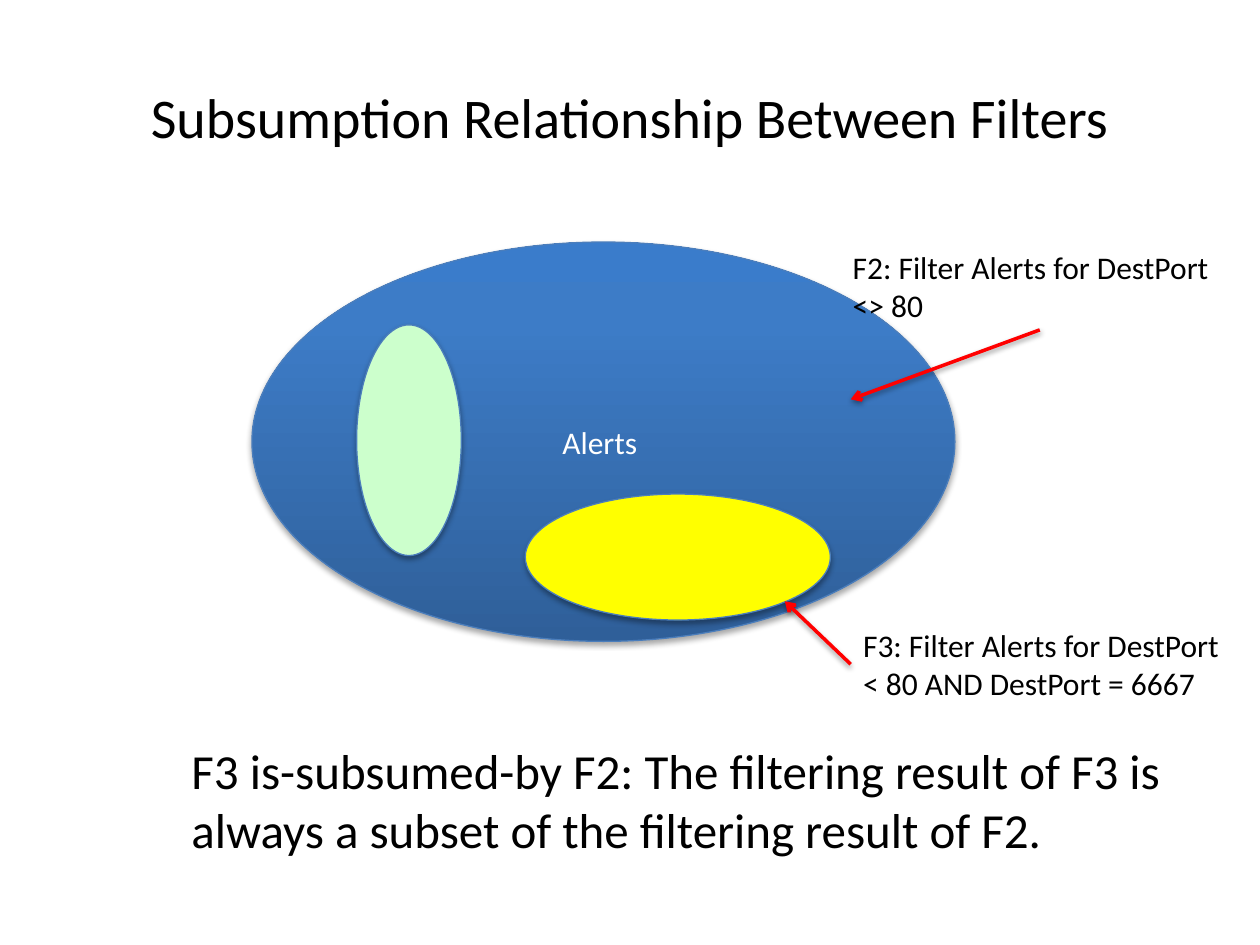
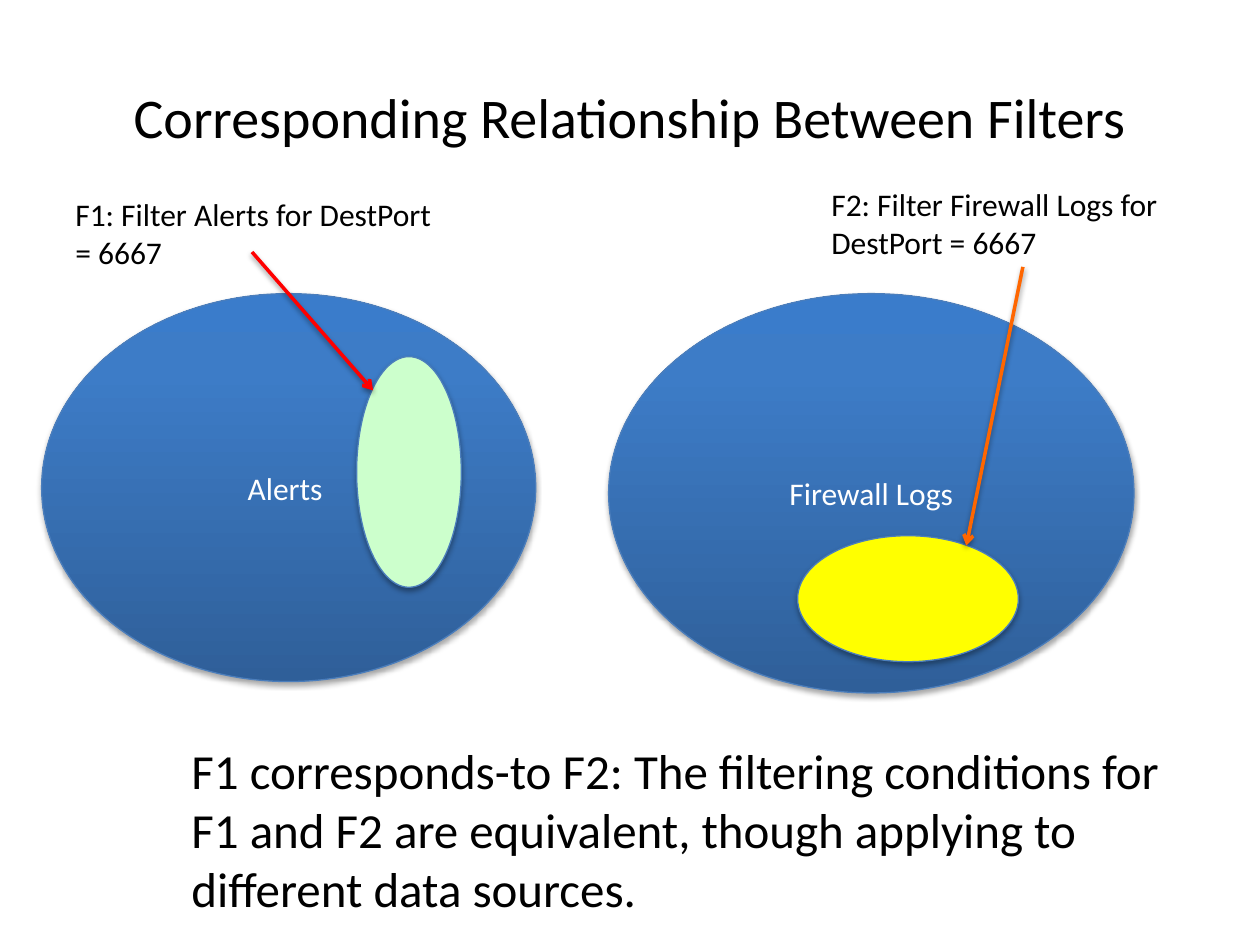
from lxml.etree import SubElement
from pptx import Presentation
from pptx.dml.color import RGBColor
from pptx.enum.shapes import MSO_CONNECTOR as Link, MSO_SHAPE as Kind
from pptx.enum.text import MSO_ANCHOR as Anchor, MSO_AUTO_SIZE as Fit, PP_ALIGN as Align
from pptx.oxml.ns import qn
from pptx.util import Cm, Pt

INK = {
    "text": "000000",
    "light": "FFFFFF",
    "edge": "4B7EBC",
    "green": "CCFFCC",
    "yellow": "FFFF00",
    "red": "FF0000",
    "orange": "FF6600",
    "low": "2F5F99",
    "mid": "3D7CC7",
    "high": "3A7CCB",
}
BLEND = [(0, "low"), (80, "mid"), (100, "high")]
TITLE_ONLY = 5


def rgb(name):
    return RGBColor.from_string(INK[name])


def add(root, tag, **attrs):
    return SubElement(root, qn(tag), {key: str(val) for key, val in attrs.items()})


def write(frame, text, size=18, color="text", align=Align.LEFT):
    para = frame.paragraphs[0]
    para.alignment = align
    run = para.add_run()
    run.text = text
    run.font.name = "Calibri"
    run.font.size = Pt(size)
    run.font.color.rgb = rgb(color)


def shade(effects, dist, alpha):
    """Fill an effect list with a soft shadow that falls straight down."""
    drop = add(effects, "a:outerShdw", blurRad=Pt(3.15), dist=Pt(dist),
               dir=90 * 60000, rotWithShape=0)
    tint = add(drop, "a:srgbClr", val=INK["text"])
    add(tint, "a:alpha", val=alpha * 1000)


def blend(shape):
    """Give a shape the blue gradient, dark at the bottom."""
    shape.fill.gradient()
    shape.fill.gradient_angle = 90
    stops = next(shape.element.iter(qn("a:gsLst")))
    for stop in list(stops):
        stops.remove(stop)
    for pos, name in BLEND:
        stop = add(stops, "a:gs", pos=pos * 1000)
        add(stop, "a:srgbClr", val=INK[name])


class Deck:
    def __init__(self):
        self.prs = Presentation()
        self.prs.slide_width, self.prs.slide_height = Cm(25.4), Cm(19.05)
        self.slide = None

    def start(self, title):
        """Open a new slide with its title."""
        layout = self.prs.slide_layouts[TITLE_ONLY]
        self.slide = self.prs.slides.add_slide(layout)
        head = self.slide.shapes.title
        head.left, head.top, head.width, head.height = map(Cm, (1.27, 0.76, 22.86, 3.18))
        head.text_frame.vertical_anchor = Anchor.MIDDLE
        write(head.text_frame, title, size=32, align=Align.CENTER)

    def oval(self, x, y, w, h, fill=None, text=None):
        """Draw a set of records; without a fill colour it gets the gradient."""
        shape = self.slide.shapes.add_shape(Kind.OVAL, *map(Cm, (x, y, w, h)))
        if fill:
            shape.fill.solid()
            shape.fill.fore_color.rgb = rgb(fill)
        else:
            blend(shape)
        shape.line.color.rgb = rgb("edge")
        shape.line.width = Pt(0.75)
        shape.shadow.inherit = False
        shade(next(shape.element.iter(qn("a:effectLst"))), dist=1.81, alpha=35)
        if text:
            shape.text_frame.vertical_anchor = Anchor.MIDDLE
            write(shape.text_frame, text, color="light", align=Align.CENTER)

    def note(self, x, y, w, text, h=1.8, size=18):
        box = self.slide.shapes.add_textbox(*map(Cm, (x, y, w, h)))
        box.text_frame.word_wrap = True
        box.text_frame.auto_size = Fit.SHAPE_TO_FIT_TEXT
        write(box.text_frame, text, size=size)

    def claim(self, text, h):
        """Put the conclusion in large type at the foot of the slide."""
        self.note(3.61, 14.81, 20.12, text, h=h, size=28)

    def arrow(self, x1, y1, x2, y2, color="red"):
        line = self.slide.shapes.add_connector(Link.STRAIGHT, *map(Cm, (x1, y1, x2, y2)))
        line.line.color.rgb = rgb(color)
        line.line.width = Pt(2)
        add(line.line._get_or_add_ln(), "a:tailEnd", type="arrow")
        shade(add(line.element.spPr, "a:effectLst"), dist=1.57, alpha=38)


def subsume(deck):
    deck.start("Subsumption Relationship Between Filters")
    deck.oval(5.08, 4.88, 14.17, 8.05, text="Alerts ")
    deck.oval(7.19, 6.55, 2.11, 4.65, fill="green")
    deck.claim("F3 is-subsumed-by F2: The filtering result of F3 is "
               "always a subset of the filtering result of F2.", h=2.64)
    deck.note(16.94, 4.88, 8.05, "F2: Filter Alerts for DestPort <> 80")
    deck.arrow(20.96, 6.65, 17.15, 8.05)
    deck.oval(10.59, 9.96, 6.15, 2.54, fill="yellow")
    deck.note(17.15, 12.5, 7.82, "F3: Filter Alerts for DestPort < 80 AND DestPort = 6667")
    deck.arrow(17.15, 13.39, 15.82, 12.12)


def match(deck):
    deck.start("Corresponding Relationship Between Filters")
    deck.oval(0.84, 5.92, 9.96, 7.82, text="Alerts ")
    deck.oval(7.19, 7.19, 2.11, 4.65, fill="green")
    deck.note(1.27, 3.81, 8.05, "F1: Filter Alerts for DestPort = 6667")
    deck.arrow(5.08, 5.08, 7.52, 7.87)
    deck.note(16.51, 3.61, 8.26, "F2: Filter Firewall Logs for DestPort = 6667")
    deck.oval(12.27, 5.92, 10.59, 8.05, text="Firewall Logs")
    deck.oval(16.08, 10.8, 4.45, 2.54, fill="yellow")
    deck.claim("F1 corresponds-to F2: The filtering conditions for F1 and F2 "
               "are equivalent, though applying to different data sources.", h=3.84)
    deck.arrow(20.62, 5.38, 19.48, 11, color="orange")


def main():
    deck = Deck()
    subsume(deck)
    match(deck)
    deck.prs.save("out.pptx")


if __name__ == "__main__":
    main()
